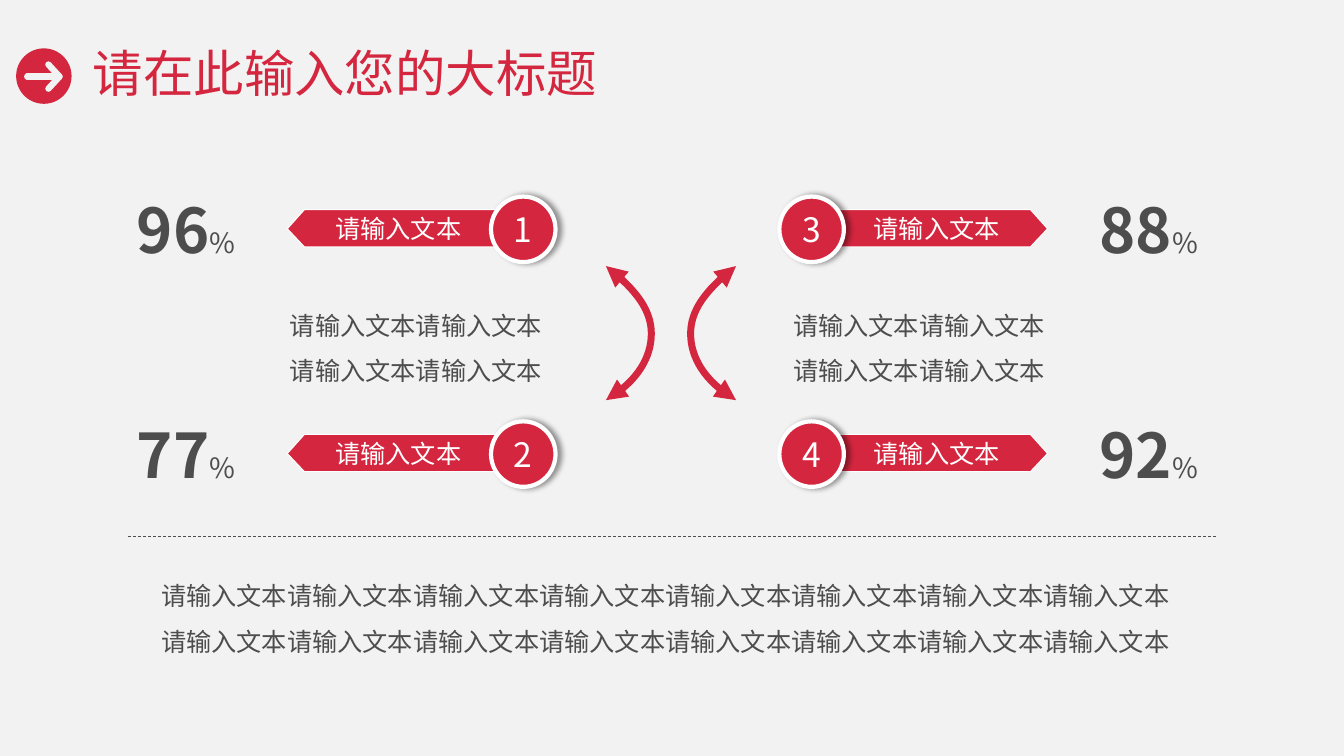
from pptx import Presentation
from pptx import util as u
from pptx.dml.color import RGBColor
from pptx.enum import dml, shapes, text
from pptx.oxml import parse_xml
from pptx.oxml.ns import nsdecls, qn

# Content
TITLE = "请在此输入您的大标题"
LABEL = "请输入文本"
ITEMS = [  # badge, percent, side (0 left, 1 right), row
    ("1", "96", 0, 0), ("2", "77", 0, 1),
    ("3", "88", 1, 0), ("4", "92", 1, 1),
]
NOTE = LABEL * 4
FOOT = LABEL * 16

# Look
RED = RGBColor(0xD4, 0x26, 0x3F)
GREY = RGBColor(0x4D, 0x4D, 0x4D)
PALE = RGBColor(0xF2, 0xF2, 0xF2)
WHITE = RGBColor(0xFF, 0xFF, 0xFF)
FONT = "Noto Sans CJK SC"
AXIS = 13.24    # left edge plus mirrored right edge of the two columns
BOW_AXIS = 13.31
PITCH = 2.23    # distance between the rows
MID, TOP = text.MSO_ANCHOR.MIDDLE, text.MSO_ANCHOR.TOP
LEFT, MIDDLE = text.PP_ALIGN.LEFT, text.PP_ALIGN.CENTER

prs = Presentation()
prs.slide_width, prs.slide_height = u.Inches(13.33), u.Inches(7.5)
slide = prs.slides.add_slide(prs.slide_layouts[5])
slide.background.fill.solid()
slide.background.fill.fore_color.rgb = PALE


def box(x, y, w, h):
    return [u.Inches(v) for v in (x, y, w, h)]


def write(shape, runs, color, align=MIDDLE, anchor=MID, space=None, pad=0.1):
    """Fill a shape with one paragraph of (words, size, bold) runs."""
    frame = shape.text_frame
    form = {"word_wrap": True, "vertical_anchor": anchor,
            "auto_size": text.MSO_AUTO_SIZE.NONE,
            "margin_left": u.Inches(pad), "margin_right": u.Inches(pad),
            "margin_top": u.Inches(pad / 2), "margin_bottom": u.Inches(pad / 2)}
    for key, val in form.items():
        setattr(frame, key, val)
    para = frame.paragraphs[0]
    para.alignment, para.line_spacing = align, space
    for words, size, bold in runs:
        run = para.add_run()
        run.text = words
        for key, val in {"size": u.Pt(size), "bold": bold, "name": FONT}.items():
            setattr(run.font, key, val)
        run.font.color.rgb = color
        run.font.fill  # colour goes before the East Asian font
        run.font._element.append(
            parse_xml(f'<a:ea {nsdecls("a")} typeface="{FONT}"/>'))


def label(place, runs, **form):
    write(slide.shapes.add_textbox(*box(*place)), runs, GREY, **form)


def paint(shape, fill, line, width):
    shape.shadow.inherit = False
    if fill is None:
        shape.fill.background()
    else:
        shape.fill.solid()
        shape.fill.fore_color.rgb = fill
    if line is None:
        shape.line.fill.background()
    else:
        shape.line.color.rgb = line
        shape.line.width = u.Pt(width)
    return shape


def outline(*runs, close=True):
    """Freeform through one or more runs of points in inches."""
    runs = [[(u.Inches(x), u.Inches(y)) for x, y in run] for run in runs]
    build = slide.shapes.build_freeform(*runs[0][0])
    for num, run in enumerate(runs):
        if num:
            build.move_to(*run[0])
        build.add_line_segments(run[1:], close=close)
    return build.convert_to_shape()


def curve(a, b, c, d, steps=16):
    """Points along a cubic Bézier curve."""
    for i in range(steps + 1):
        t = i / steps
        s = 1 - t
        yield tuple(s**3 * p + 3 * s * s * t * q + 3 * s * t * t * r + t**3 * v
                    for p, q, r, v in zip(a, b, c, d))


def oval(*place):
    return slide.shapes.add_shape(shapes.MSO_SHAPE.OVAL, *box(*place))


# Title with its round arrow icon
paint(oval(0.16, 0.48, 0.55, 0.55), RED, None, 0)
arrow = outline([(0.27, 0.76), (0.59, 0.76)],
                [(0.48, 0.64), (0.59, 0.76), (0.48, 0.88)], close=False)
stroke = paint(arrow, None, PALE, 4.5).line._get_or_add_ln()
stroke.set("cap", "rnd")
stroke.append(parse_xml(f'<a:round {nsdecls("a")}/>'))

title = slide.shapes.title
title.left, title.top, title.width, title.height = box(0.82, 0.29, 10.98, 0.93)
write(title, [(TITLE, 36, False)], RED, align=LEFT, space=0.9)

# Bowed double arrows
upper = list(curve((6.01, 2.64), (6.33, 2.89), (6.46, 3.09), (6.46, 3.31)))
lower = list(curve((6.46, 3.31), (6.46, 3.54), (6.33, 3.78), (6.01, 3.97)))
bow = upper + lower[1:]
for pts in (bow, [(BOW_AXIS - x, y) for x, y in bow]):
    line = paint(outline(pts, close=False), None, RED, 5).line._get_or_add_ln()
    for end in ("headEnd", "tailEnd"):
        line.append(parse_xml(f'<a:{end} {nsdecls("a")} type="triangle"/>'))

# Four items: banner, badge, percentage
BANNER = [(3.02, 0.37), (5.05, 0.37), (4.88, 0.19), (5.05, 0),
          (3.02, 0), (2.85, 0.19)]
SHADE = (f'<a:effectLst {nsdecls("a")}><a:outerShdw blurRad="50800" '
         'dist="38100" dir="0" algn="l" rotWithShape="0"><a:srgbClr val="000000">'
         '<a:alpha val="40000"/></a:srgbClr></a:outerShdw></a:effectLst>')


def flip(x, w, side):
    return AXIS - x - w if side else x


for badge, rate, side, row in ITEMS:
    y = 2.08 + row * PITCH
    tag = outline([(flip(px, 0, side), y + py) for px, py in BANNER])
    write(paint(tag, RED, WHITE, 0.75), [(LABEL, 18, False)], WHITE, pad=0)

    disc = paint(oval(flip(4.87, 0.64, side), y - 0.13, 0.64, 0.65), RED, WHITE, 3)
    props = disc._element.spPr
    props.replace(props.find(qn("a:effectLst")), parse_xml(SHADE))
    write(disc, [(badge, 24, False)], WHITE, pad=0)

    label((flip(0.97, 1.75, side), y - 0.22, 1.75, 0.84),
          [(rate, 44, True), ("%", 20, False)], anchor=TOP)

# Notes between the rows
for side in (0, 1):
    label((flip(2.75, 2.75, side), 2.83, 2.75, 1.1), [(NOTE, 18, False)], space=1.5)

# Footer text below a dashed rule
label((1.5, 5.41, 10.34, 1.3), [(FOOT, 18, False)], align=LEFT, space=1.5)
rule = slide.shapes.add_connector(shapes.MSO_CONNECTOR.STRAIGHT,
                                  *box(1.27, 5.32, 12.06, 5.32))
rule.line.color.rgb = GREY
rule.line.width = u.Pt(0.5)
rule.line.dash_style = dml.MSO_LINE.DASH
rule._element.spPr.append(parse_xml(f'<a:effectLst {nsdecls("a")}/>'))

prs.save("out.pptx")
